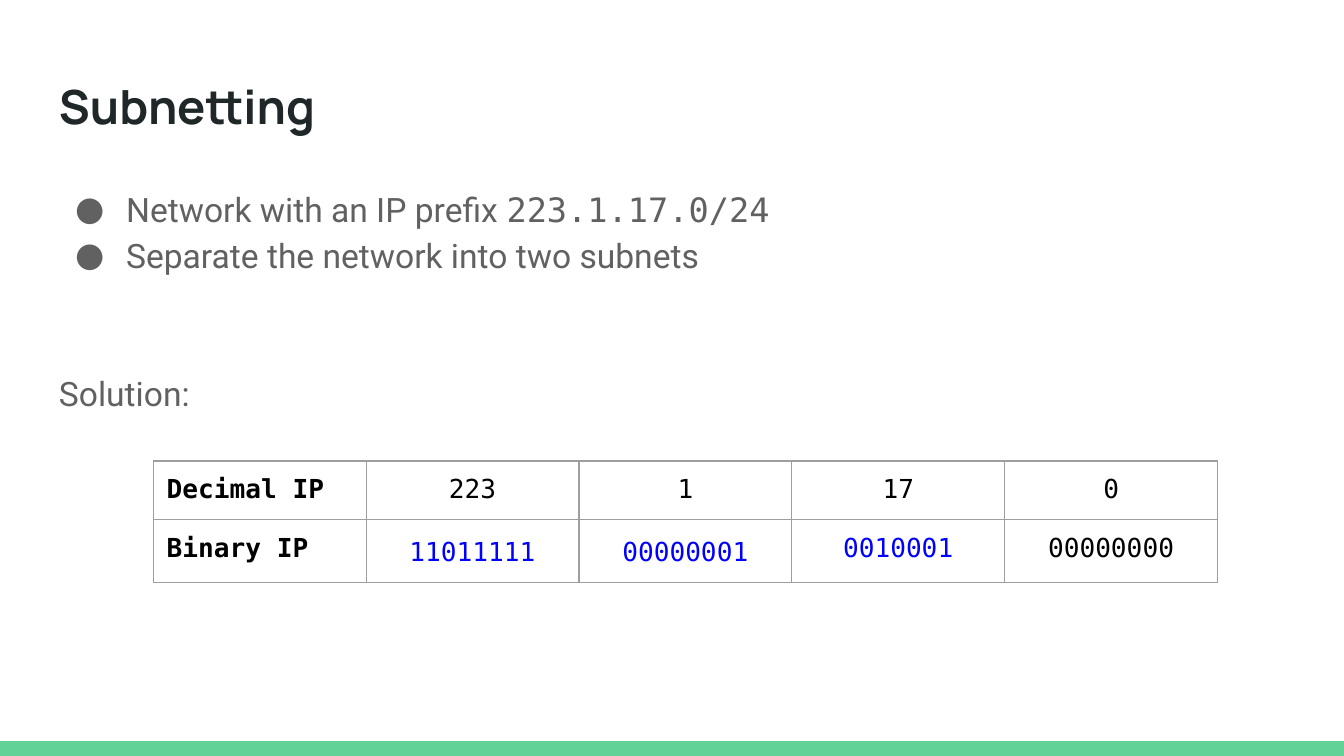
from dataclasses import dataclass

from lxml.etree import SubElement
from pptx import Presentation
from pptx.dml.color import RGBColor
from pptx.enum.shapes import MSO_SHAPE
from pptx.enum.text import PP_ALIGN
from pptx.oxml import parse_xml
from pptx.oxml.ns import nsdecls, qn
from pptx.util import Inches, Pt


@dataclass(frozen=True)
class Theme:
    heading_font: str = "Manrope"
    body_font: str = "Roboto"
    mono_font: str = "DejaVu Sans Mono"
    heading_size: float = 25.2
    body_size: float = 18
    cell_size: float = 14
    heading: str = "202729"
    body: str = "616161"
    ink: str = "000000"
    network: str = "0000FF"
    grid: str = "9E9E9E"
    accent: str = "63D297"
    grid_width: float = 0.75
    leading: float = 1.15


THEME = Theme()
WIDTH = 10
HEIGHT = WIDTH * 9 / 16
MARGIN, INSET = 0.34, 0.1
BAND_HEIGHT = 0.11
TABLE_LEFT, TABLE_TOP = 1.14, 3.43
TABLE_WIDTH, ROW = 7.92, 0.42

TITLE = "Subnetting"
TASK = [
    [("Network with an IP prefix ", THEME.body_font), ("223.1.17.0/24", THEME.mono_font)],
    [("Separate the network into two subnets", THEME.body_font)],
]
SOLUTION = "Solution:"
ADDRESS = [
    ["Decimal IP", "223", "1", "17", "0"],
    ["Binary IP", "11011111", "00000001", "0010001", "00000000"],
]
NETWORK_OCTETS = {(1, 1), (1, 2), (1, 3)}
SPACED_OCTETS = {(1, 1), (1, 2)}


def write(paragraph, text, *, font, size, color, bold=False, align=PP_ALIGN.LEFT,
          leading=None, before=None, after=None):
    paragraph.alignment = align
    if leading is not None:
        paragraph.line_spacing = leading
    if before is not None:
        paragraph.space_before = Pt(before)
    if after is not None:
        paragraph.space_after = Pt(after)
    run = paragraph.add_run()
    run.text = text
    run.font.name = font
    run.font.size = Pt(size)
    run.font.bold = bold
    run.font.color.rgb = RGBColor.from_string(color)


def add_bullet(paragraph):
    properties = paragraph._p.get_or_add_pPr()
    properties.set("marL", str(Inches(0.5)))
    properties.set("indent", str(-Inches(0.38)))
    bullet_color = SubElement(properties, qn("a:buClr"))
    SubElement(bullet_color, qn("a:srgbClr"), val=THEME.body)
    SubElement(properties, qn("a:buFont"), typeface=THEME.body_font)
    SubElement(properties, qn("a:buChar"), char="●")


def add_frame(slide, top, height):
    box = slide.shapes.add_textbox(
        Inches(MARGIN), Inches(top), Inches(WIDTH - 2 * MARGIN), Inches(height))
    frame = box.text_frame
    frame.word_wrap = True
    set_insets(frame)
    return frame


def set_insets(holder):
    holder.margin_left = holder.margin_right = Inches(INSET)
    holder.margin_top = holder.margin_bottom = Inches(INSET)


def add_borders(cell):
    properties = cell._tc.get_or_add_tcPr()
    for position, side in enumerate(("lnL", "lnR", "lnT", "lnB")):
        properties.insert(position, parse_xml(
            f'<a:{side} {nsdecls("a")} w="{Pt(THEME.grid_width)}"><a:solidFill>'
            f'<a:srgbClr val="{THEME.grid}"/></a:solidFill></a:{side}>'))


def add_band(slide):
    band = slide.shapes.add_shape(
        MSO_SHAPE.RECTANGLE, 0, Inches(HEIGHT - BAND_HEIGHT),
        Inches(WIDTH), Inches(BAND_HEIGHT))
    band.shadow.inherit = False
    band.fill.solid()
    band.fill.fore_color.rgb = RGBColor.from_string(THEME.accent)
    band.line.fill.background()


def add_task(slide):
    body = add_frame(slide, 1.26, 3.74)
    style = dict(size=THEME.body_size, color=THEME.body, leading=THEME.leading)
    for index, parts in enumerate(TASK):
        point = body.add_paragraph() if index else body.paragraphs[0]
        for text, font in parts:
            write(point, text, font=font, **style)
        add_bullet(point)
    write(body.add_paragraph(), SOLUTION, font=THEME.body_font, before=49, **style)


def add_address_table(slide):
    columns, rows = len(ADDRESS[0]), len(ADDRESS)
    table = slide.shapes.add_table(
        rows, columns, Inches(TABLE_LEFT), Inches(TABLE_TOP),
        Inches(TABLE_WIDTH), Inches(rows * ROW)).table
    table.first_row = table.horz_banding = False
    for row, octets in enumerate(ADDRESS):
        for column, octet in enumerate(octets):
            cell = table.cell(row, column)
            set_insets(cell)
            cell.fill.background()
            add_borders(cell)
            spacing = {}
            if (row, column) in SPACED_OCTETS:
                spacing = dict(leading=THEME.leading, before=12, after=12)
            write(cell.text_frame.paragraphs[0], octet,
                  font=THEME.mono_font, size=THEME.cell_size,
                  color=THEME.network if (row, column) in NETWORK_OCTETS else THEME.ink,
                  bold=column == 0,
                  align=PP_ALIGN.CENTER if column else PP_ALIGN.LEFT, **spacing)


def main():
    deck = Presentation()
    deck.slide_width, deck.slide_height = Inches(WIDTH), Inches(HEIGHT)
    slide = deck.slides.add_slide(deck.slide_layouts[6])
    add_band(slide)
    write(add_frame(slide, 0.48, 0.63).paragraphs[0], TITLE, font=THEME.heading_font,
          size=THEME.heading_size, color=THEME.heading, bold=True)
    add_task(slide)
    add_address_table(slide)
    deck.save("out.pptx")


if __name__ == "__main__":
    main()
